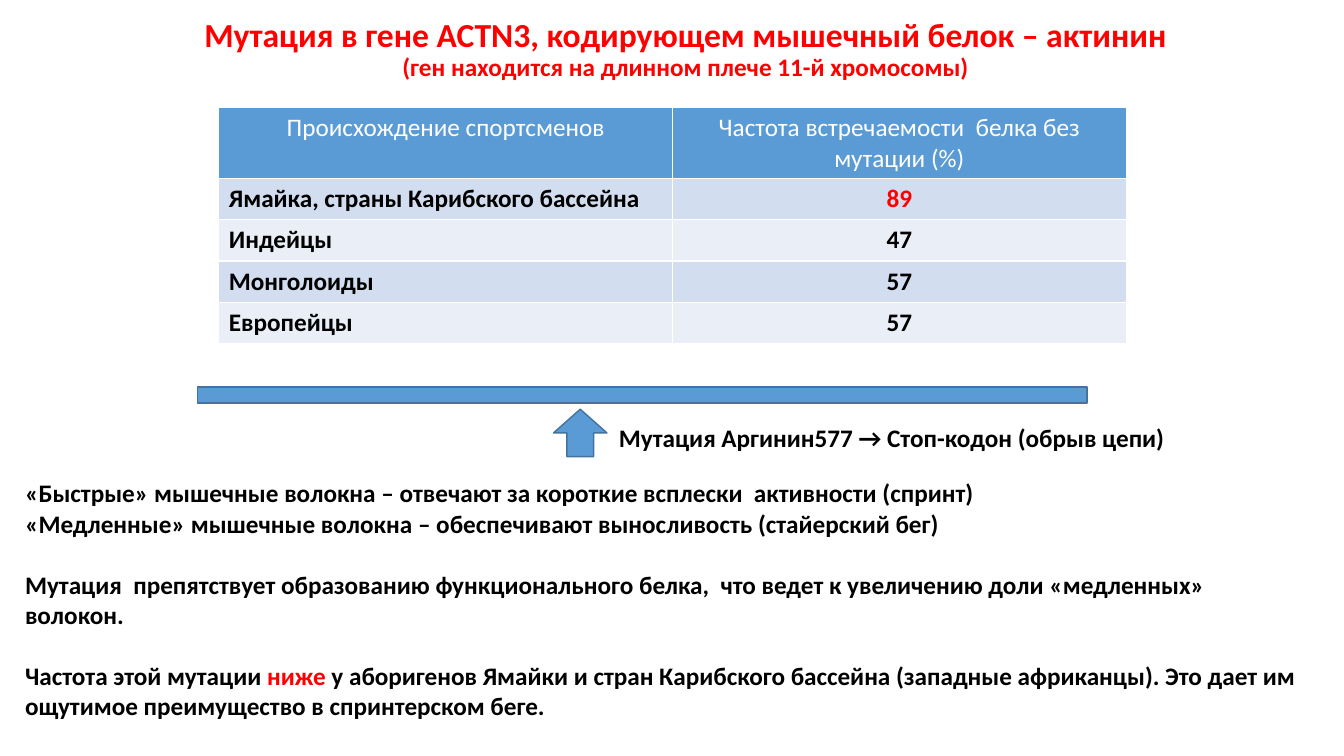
from pptx import Presentation
from pptx.dml.color import RGBColor
from pptx.enum.shapes import MSO_SHAPE
from pptx.enum.text import MSO_ANCHOR, PP_ALIGN
from pptx.util import Emu, Pt

PX = 9144  # 100 px to the inch
RED, BLACK, WHITE, BLUE = "FF0000", "000000", "FFFFFF", "5B9BD5"


def color(value):
    return RGBColor.from_string(value)


def add_run(p, text, rgb=BLACK, size=18, bold=True):
    r = p.add_run()
    r.text = text
    for name, value in {"name": "Calibri", "size": Pt(size), "bold": bold}.items():
        setattr(r.font, name, value)
    r.font.color.rgb = color(rgb)


prs = Presentation()
prs.slide_width, prs.slide_height = Emu(1333 * PX), Emu(750 * PX)
s = prs.slides.add_slide(prs.slide_layouts[6])

# Text boxes
boxes = {}
for name, box in {
    "title": (51, 0, 1258, 99),
    "mutation": (604, 414, 594, 40),
    "notes": (15, 469, 1294, 222),
}.items():
    tf = s.shapes.add_textbox(*[Emu(v * PX) for v in box]).text_frame
    tf.word_wrap = True
    boxes[name] = tf

# Title
boxes["title"].vertical_anchor = MSO_ANCHOR.MIDDLE
p = boxes["title"].paragraphs[0]
p.alignment = PP_ALIGN.CENTER
p.line_spacing = 0.9
add_run(p, "Мутация в гене ACTN3, кодирующем мышечный белок – актинин", RED, 24)
p.add_line_break()
add_run(p, "(ген находится на длинном плече 11-й хромосомы)", RED)

# Frequency table
rows = [
    ("Происхождение спортсменов", "Частота встречаемости  белка без мутации (%)"),
    ("Ямайка, страны Карибского бассейна", "89"),
    ("Индейцы", "47"),
    ("Монголоиды", "57"),
    ("Европейцы", "57"),
]
table = s.shapes.add_table(
    len(rows), 2, *[Emu(v * PX) for v in (217, 107, 900, 234)]).table
for i, row in enumerate(rows):
    header = i == 0
    table.rows[i].height = Emu((70 if header else 41) * PX)
    for j, text in enumerate(row):
        cell = table.cell(i, j)
        cell.fill.solid()
        cell.fill.fore_color.rgb = color(
            BLUE if header else "D2DEEF" if i % 2 else "EAEFF7")
        p = cell.text_frame.paragraphs[0]
        p.alignment = PP_ALIGN.CENTER if header or j else PP_ALIGN.LEFT
        rgb = WHITE if header else RED if text == "89" else BLACK
        add_run(p, text, rgb, bold=not header)

# Protein chain and mutation arrow
for kind, box in (
    (MSO_SHAPE.FLOWCHART_PROCESS, (196, 384, 882, 16)),
    (MSO_SHAPE.UP_ARROW, (549, 406, 53, 47)),
):
    sp = s.shapes.add_shape(kind, *[Emu(v * PX) for v in box])
    sp.shadow.inherit = False
    sp.fill.solid()
    sp.fill.fore_color.rgb = color(BLUE)
    sp.line.color.rgb = color("43739E")
    sp.line.width = Pt(1)

add_run(boxes["mutation"].paragraphs[0],
        "Мутация Аргинин577 → Стоп-кодон (обрыв цепи)")

# Notes on muscle fibres: space before in points, then runs
notes = [
    (0, [("«Быстрые» мышечные волокна – отвечают за короткие всплески  "
          "активности (спринт)", BLACK)]),
    (0, [("«Медленные» мышечные волокна – обеспечивают выносливость "
          "(стайерский бег)", BLACK)]),
    (22, [("Мутация  препятствует образованию функционального белка,  "
           "что ведет к увеличению доли «медленных» волокон.", BLACK)]),
    (22, [("Частота этой мутации ", BLACK), ("ниже", RED),
          (" у аборигенов Ямайки и стран Карибского бассейна (западные "
           "африканцы). Это дает им ощутимое преимущество в спринтерском "
           "беге.", BLACK)]),
]
tf = boxes["notes"]
for i, (gap, runs) in enumerate(notes):
    p = tf.add_paragraph() if i else tf.paragraphs[0]
    p.space_before = Pt(gap)
    for text, rgb in runs:
        add_run(p, text, rgb)

prs.save("out.pptx")
